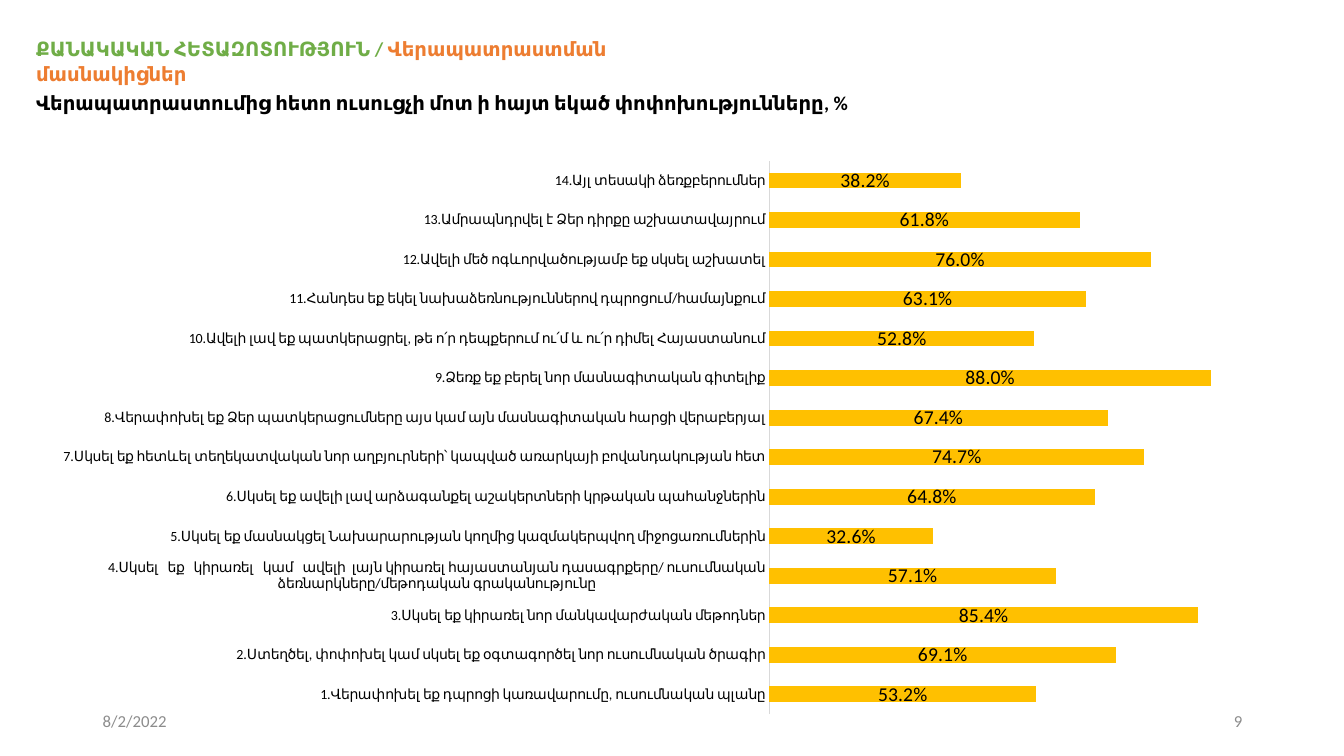
"""Build the slide on changes seen in teachers after retraining."""
from lxml import etree
from pptx import Presentation
from pptx.chart.data import CategoryChartData
from pptx.dml.color import RGBColor
from pptx.enum import chart as ch, text
from pptx.oxml.ns import qn
from pptx.util import Inches, Pt

FONT = "Calibri"
BLACK, GREEN, ORANGE, GOLD = "000000", "70AD47", "ED7D31", "FFC000"
GRAY, AXIS_GRAY = "8C8C8C", "D9D9D9"

CHANGES = [
    ("1.Վերափոխել եք դպրոցի կառավարումը, ուսումնական պլանը", 0.532),
    ("2.Ստեղծել, փոփոխել կամ սկսել եք օգտագործել նոր ուսումնական ծրագիր", 0.691),
    ("3.Սկսել եք կիրառել նոր մանկավարժական մեթոդներ", 0.854),
    ("4.Սկսել   եք   կիրառել   կամ   ավելի  լայն կիրառել հայաստանյան դասագրքերը/ "
     "ուսումնական ձեռնարկները/մեթոդական գրականությունը", 0.571),
    ("5.Սկսել եք մասնակցել Նախարարության կողմից կազմակերպվող միջոցառումներին", 0.326),
    ("6.Սկսել եք ավելի լավ արձագանքել աշակերտների կրթական պահանջներին", 0.648),
    ("7.Սկսել եք հետևել տեղեկատվական նոր աղբյուրների՝ կապված առարկայի "
     "բովանդակության հետ", 0.747),
    ("8.Վերափոխել եք Ձեր պատկերացումները այս կամ այն մասնագիտական հարցի վերաբերյալ", 0.674),
    ("9.Ձեռք եք բերել նոր մասնագիտական գիտելիք", 0.88),
    ("10.Ավելի լավ եք պատկերացրել, թե ո՛ր դեպքերում ու՛մ և ու՛ր դիմել Հայաստանում", 0.528),
    ("11.Հանդես եք եկել նախաձեռնություններով դպրոցում/համայնքում", 0.631),
    ("12.Ավելի մեծ ոգևորվածությամբ եք սկսել աշխատել", 0.76),
    ("13.Ամրապնդրվել է Ձեր դիրքը աշխատավայրում", 0.618),
    ("14.Այլ տեսակի ձեռքբերումներ", 0.382),
]


def rgb(value):
    """Turn a hex string into a colour."""
    return RGBColor.from_string(value)


def set_font(font, size, color, bold=False):
    """Format a font."""
    font.name, font.size, font.bold = FONT, Pt(size), bold
    font.color.rgb = rgb(color)


def add_text(slide, box, runs, size=14, bold=False, align=text.PP_ALIGN.LEFT,
             anchor=text.MSO_ANCHOR.TOP, spacing=1.0, after=0):
    """Add a one-paragraph text box from (text, colour) runs."""
    tf = slide.shapes.add_textbox(*map(Inches, box)).text_frame
    tf.word_wrap = True
    tf.vertical_anchor = anchor
    p = tf.paragraphs[0]
    p.alignment, p.line_spacing, p.space_after = align, spacing, Pt(after)
    for content, color in runs:
        r = p.add_run()
        r.text = content
        set_font(r.font, size, color, bold)


def set_plot_area(chart, **fractions):
    """Fix the inner plot area as fractions of the chart."""
    area = chart._chartSpace.chart.plotArea
    for old in area.findall(qn("c:layout")):
        area.remove(old)
    layout = etree.Element(qn("c:layout"))
    manual = etree.SubElement(layout, qn("c:manualLayout"))
    settings = {"layoutTarget": "inner", "xMode": "edge", "yMode": "edge", **fractions}
    for tag, value in settings.items():
        etree.SubElement(manual, qn(f"c:{tag}")).set("val", str(value))
    area.insert(0, layout)


def add_bars(slide, box, rows):
    """Add the bar chart of (category, share) rows."""
    data = CategoryChartData(number_format="0.0%")
    data.categories = [name for name, _ in rows]
    data.add_series("Series 1", [share for _, share in rows])
    chart = slide.shapes.add_chart(
        ch.XL_CHART_TYPE.BAR_STACKED, *map(Inches, box), data).chart
    chart.has_legend = chart.has_title = False
    set_font(chart.font, 10, BLACK)
    set_plot_area(chart, x=0.58, y=0.02, w=0.4, h=0.96)

    axis = chart.category_axis
    axis.major_tick_mark = axis.minor_tick_mark = ch.XL_TICK_MARK.NONE
    set_font(axis.tick_labels.font, 10, BLACK)
    axis.format.line.color.rgb = rgb(AXIS_GRAY)
    axis.format.line.width = Pt(0.75)
    values = chart.value_axis
    values.visible = values.has_major_gridlines = False
    values.minimum_scale, values.maximum_scale = 0, 1

    plot = chart.plots[0]
    plot.gap_width, plot.overlap, plot.vary_by_categories = 150, 100, False
    fill = plot.series[0].format.fill
    fill.solid()
    fill.fore_color.rgb = rgb(GOLD)
    labels = plot.series[0].data_labels
    labels.show_value = True
    labels.number_format, labels.number_format_is_linked = "0.0%", False
    labels.position = ch.XL_LABEL_POSITION.CENTER
    set_font(labels.font, 14, BLACK)


def main():
    """Build and save the slide."""
    prs = Presentation()
    prs.slide_width, prs.slide_height = Inches(13.33), Inches(7.5)
    slide = prs.slides.add_slide(prs.slide_layouts[6])
    add_text(slide, (0.26, 0.84, 9.77, 0.34),
             [("Վերապատրաստումից հետո ուսուցչի մոտ ի հայտ եկած փոփոխությունները, %", BLACK)],
             bold=True, align=text.PP_ALIGN.JUSTIFY, spacing=1.07, after=6)
    add_bars(slide, (0.41, 1.48, 12.45, 5.72), CHANGES)
    add_text(slide, (0.26, 0.3, 7.36, 0.35),
             [("ՔԱՆԱԿԱԿԱՆ ՀԵՏԱԶՈՏՈՒԹՅՈՒՆ / ", GREEN),
              ("Վերապատրաստման մասնակիցներ", ORANGE)],
             bold=True, spacing=1.07, after=8)
    for left, content, align in ((0.92, "8/2/2022", text.PP_ALIGN.LEFT),
                                 (9.42, "9", text.PP_ALIGN.RIGHT)):
        add_text(slide, (left, 6.95, 3, 0.4), [(content, GRAY)], size=12,
                 align=align, anchor=text.MSO_ANCHOR.MIDDLE)
    prs.save("out.pptx")


if __name__ == "__main__":
    main()
